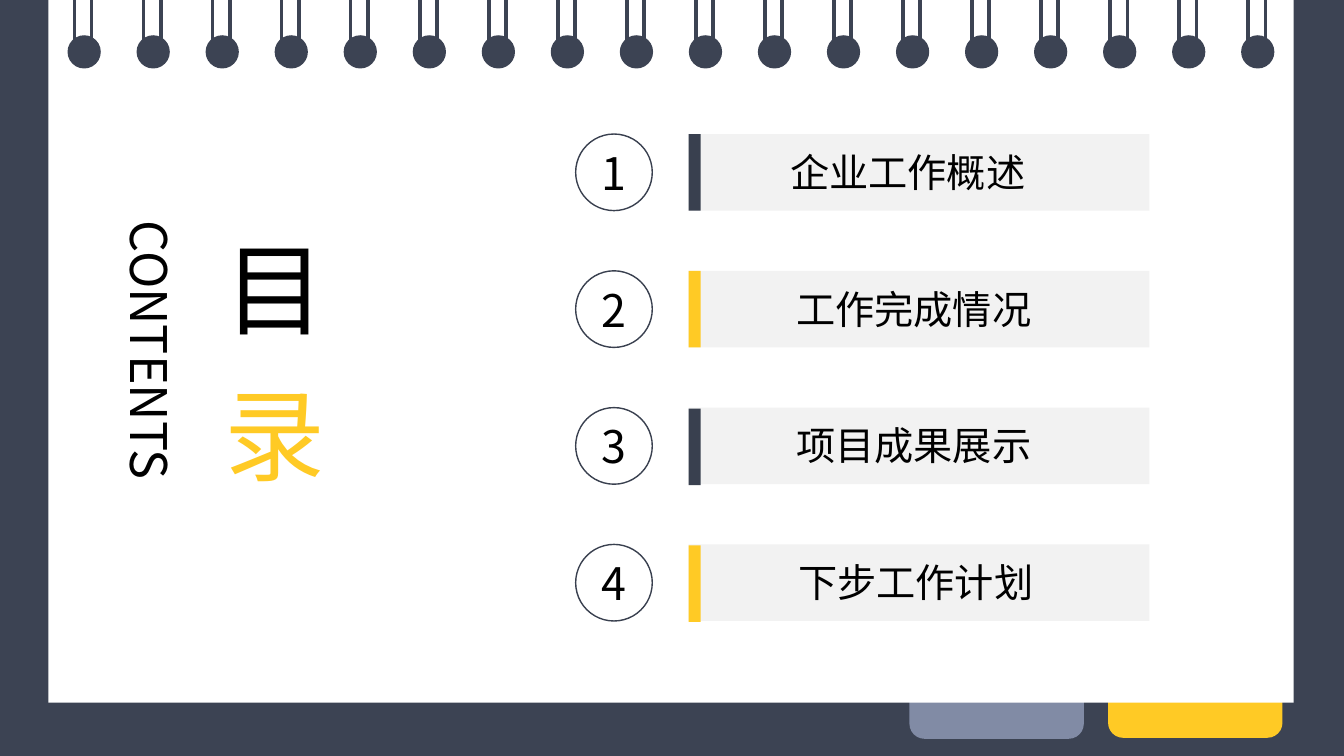
from lxml.etree import SubElement
from pptx import Presentation
from pptx.dml.color import RGBColor
from pptx.enum.shapes import MSO_CONNECTOR as CONN, MSO_SHAPE as SHAPE
from pptx.enum.text import MSO_ANCHOR as ANCHOR, MSO_AUTO_SIZE as AUTO, PP_ALIGN as ALIGN
from pptx.oxml.ns import qn
from pptx.util import Inches, Pt

COLORS = {"navy": "3C4353", "slate": "39404F", "yellow": "FFCA25", "blue": "818BA5",
          "gray": "F2F2F2", "white": "FFFFFF", "black": "000000"}
TITLE_FONT, ITEM_FONT = "Noto Sans CJK JP", "Noto Sans CJK SC"

TABS = [(10.99, 6.42, "yellow"), (9.02, 6.43, "blue")]
TITLE = [("目", 2.2, "black"), ("录", 3.65, "yellow")]
ITEMS = [("企业工作概述", 7.74, "slate", 0), ("工作完成情况", 7.8, "yellow", 0),
         ("项目成果展示", 7.8, "slate", 0.01), ("下步工作计划", 7.82, "yellow", 0.01)]

RING_COUNT, RING_FIRST, RING_LAST, RING_SIZE = 18, 0.67, 12.31, 0.33
WIRE_OFFSETS = (0.07, 0.24)
ITEM_TOP, ITEM_PITCH, ITEM_HEIGHT = 1.33, 1.357, 0.76


def rgb(name):
    return RGBColor.from_string(COLORS[name])


def add_box(shapes, kind, x, y, w, h, fill=None, line=None):
    s = shapes.add_shape(kind, Inches(x), Inches(y), Inches(w), Inches(h))
    s.shadow.inherit = False
    if fill:
        s.fill.solid()
        s.fill.fore_color.rgb = rgb(fill)
    else:
        s.fill.background()
    if line:
        s.line.color.rgb = rgb(line)
        s.line.width = Pt(1)
    else:
        s.line.fill.background()
    return s


def add_wire(shapes, x):
    c = shapes.add_connector(CONN.STRAIGHT, Inches(x), 0, Inches(x), Inches(0.51))
    c.line.color.rgb = rgb("navy")
    c.line.width = Pt(2.5)
    SubElement(c._element.spPr, qn("a:effectLst"))


def write(s, text, size, font, color="black", align=ALIGN.CENTER):
    p = s.text_frame.paragraphs[0]
    p.text = text
    p.alignment = align
    p.font.size = Pt(size)
    p.font.name = font
    p.font.color.rgb = rgb(color)
    SubElement(p.font._element, qn("a:ea"), typeface=font)


def add_text(shapes, x, y, w, h, *text_args, **text_kwargs):
    s = shapes.add_textbox(Inches(x), Inches(y), Inches(w), Inches(h))
    s.text_frame.word_wrap = True
    s.text_frame.auto_size = AUTO.SHAPE_TO_FIT_TEXT
    write(s, *text_args, **text_kwargs)
    return s


def add_notebook(shapes):
    add_box(shapes, SHAPE.RECTANGLE, 0, 0, 13.33, 7.5, "navy")
    for x, y, color in TABS:
        add_box(shapes, SHAPE.ROUNDED_RECTANGLE, x, y, 1.73, 0.9, color)
    page = shapes.add_group_shape().shapes
    add_box(page, SHAPE.RECTANGLE, 0.48, 0, 12.35, 6.97, "white")
    pitch = (RING_LAST - RING_FIRST) / (RING_COUNT - 1)
    for i in range(RING_COUNT):
        x = RING_FIRST + i * pitch
        add_box(page, SHAPE.OVAL, x, 0.35, RING_SIZE, RING_SIZE, "navy")
        for offset in WIRE_OFFSETS:
            add_wire(page, x + offset)


def add_title(shapes):
    s = add_text(shapes, 1.03, 2.09, 0.81, 3.13, "CONTENTS", 36, TITLE_FONT, align=ALIGN.JUSTIFY)
    s.text_frame._txBody.bodyPr.set("vert", "eaVert")
    for text, y, color in TITLE:
        add_text(shapes, 2.04, y, 1.37, 1.31, text, 72, TITLE_FONT, color)


def add_items(shapes):
    for i, (text, text_x, color, bar_shift) in enumerate(ITEMS):
        y = ITEM_TOP + i * ITEM_PITCH
        circle = add_box(shapes, SHAPE.OVAL, 5.71, y, ITEM_HEIGHT, ITEM_HEIGHT, line="slate")
        circle.text_frame.vertical_anchor = ANCHOR.MIDDLE
        write(circle, str(i + 1), 32, ITEM_FONT)
        item = shapes.add_group_shape().shapes
        add_box(item, SHAPE.RECTANGLE, 6.83, y, 4.57, ITEM_HEIGHT, "gray")
        add_box(item, SHAPE.RECTANGLE, 6.83, y + bar_shift, 0.12, ITEM_HEIGHT, color)
        add_text(item, text_x, y + 0.09, 2.74, 0.57, text, 28, ITEM_FONT, align=ALIGN.JUSTIFY)


def main():
    prs = Presentation()
    prs.slide_width, prs.slide_height = Inches(13.33), Inches(7.5)
    shapes = prs.slides.add_slide(prs.slide_layouts[6]).shapes
    add_notebook(shapes)
    add_title(shapes)
    add_items(shapes)
    prs.save("out.pptx")


if __name__ == "__main__":
    main()
